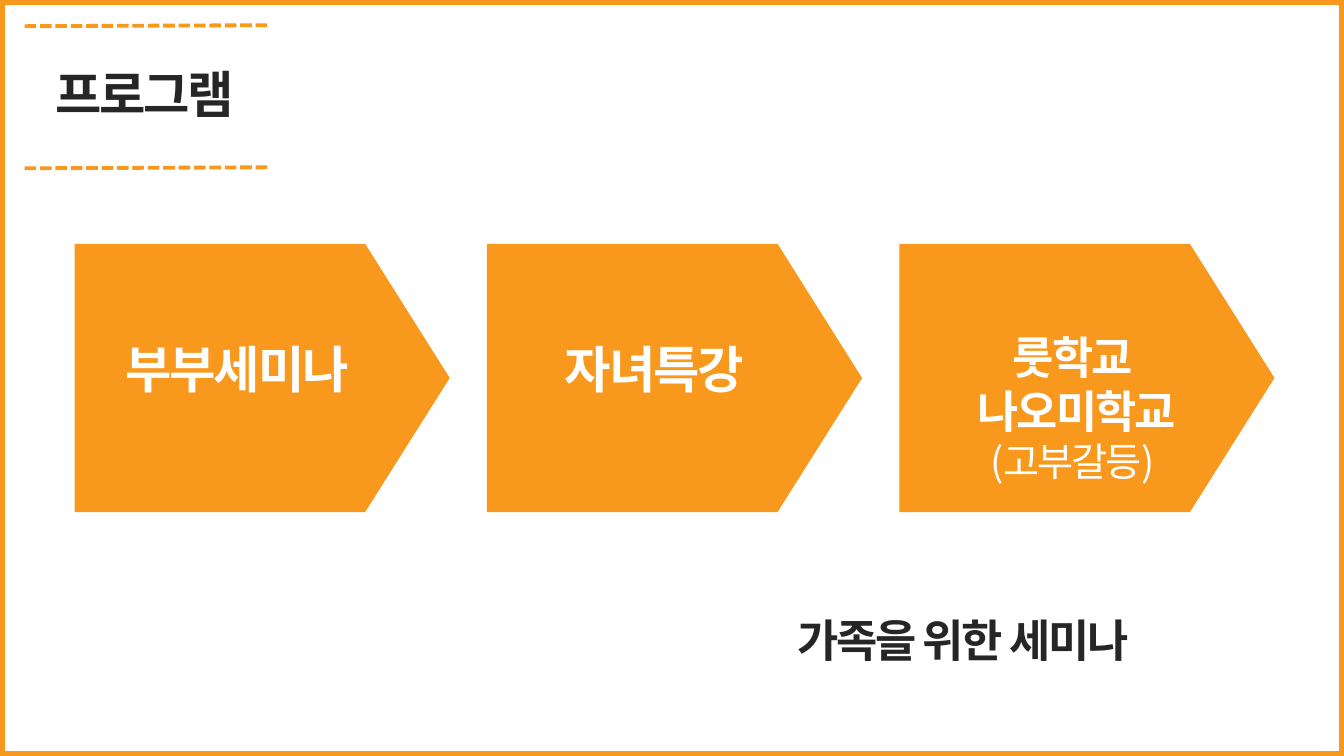
from pptx import Presentation
from pptx.dml.color import RGBColor
from pptx.enum.dml import MSO_LINE
from pptx.enum.shapes import MSO_CONNECTOR, MSO_SHAPE
from pptx.enum.text import MSO_ANCHOR, MSO_AUTO_SIZE, PP_ALIGN
from pptx.oxml.ns import qn
from pptx.util import Inches, Pt
from lxml.etree import SubElement

ORANGE = RGBColor(0xF8, 0x98, 0x1D)
DARK = RGBColor(0x26, 0x26, 0x26)
WHITE = RGBColor(0xFF, 0xFF, 0xFF)
FONT = "Noto Sans CJK KR"

# Each line of text: wording, size in points, bold
TITLE = [("프로그램", 36, True)]
CAPTION = [("가족을 위한 세미나", 32, True)]
# Each program: left, top and height of its label, then its lines
PROGRAMS = [
    (0.96, 3.3, 0.71, [("부부세미나", 36, True)]),
    (5.1, 3.31, 0.71, [("자녀특강", 36, True)]),
    (9.25, 3.22, 1.65, [("룻학교", 32, True), (" 나오미학교", 32, True), ("(고부갈등)", 28, False)]),
]
ARROW_LEFT, ARROW_STEP = 0.74, 4.09
RULE_TOPS = (0.25, 1.66)


def write_lines(box, lines, color):
    frame = box.text_frame
    frame.word_wrap = True
    frame.auto_size = MSO_AUTO_SIZE.SHAPE_TO_FIT_TEXT
    frame.vertical_anchor = MSO_ANCHOR.TOP
    frame.text = "\n".join(text for text, _, _ in lines)
    for para, (_, size, bold) in zip(frame.paragraphs, lines):
        para.alignment = PP_ALIGN.CENTER
        para.line_spacing = 1.0
        para.space_before = Pt(0)
        for span in para.runs:
            span.font.size = Pt(size)
            span.font.bold = bold
            span.font.name = FONT
            span.font.color.rgb = color
            properties = span.font._element
            properties.set("spc", "-150")
            SubElement(properties, qn("a:ea")).set("typeface", FONT)


def add_label(page, left, top, width, height, lines, color):
    box = page.shapes.add_textbox(Inches(left), Inches(top), Inches(width), Inches(height))
    write_lines(box, lines, color)


def add_frame(page):
    frame = page.shapes.add_shape(
        MSO_SHAPE.RECTANGLE, Inches(0.02), Inches(0.02), Inches(13.29), Inches(7.46))
    frame.shadow.inherit = False
    frame.fill.background()
    frame.line.color.rgb = ORANGE
    frame.line.width = Pt(3.75)


def add_dashed_rule(page, top):
    rule = page.shapes.add_connector(
        MSO_CONNECTOR.STRAIGHT, Inches(2.65), Inches(top), Inches(0.23), Inches(top + 0.01))
    rule.line.color.rgb = ORANGE
    rule.line.width = Pt(2.75)
    rule.line.dash_style = MSO_LINE.SQUARE_DOT
    SubElement(rule._element.spPr, qn("a:effectLst"))


def add_arrow(page, left):
    arrow = page.shapes.add_shape(
        MSO_SHAPE.PENTAGON, Inches(left), Inches(2.42), Inches(3.72), Inches(2.66))
    arrow.adjustments[0] = 0.315
    arrow.shadow.inherit = False
    arrow.fill.solid()
    arrow.fill.fore_color.rgb = ORANGE
    arrow.line.fill.background()


def main():
    deck = Presentation()
    deck.slide_width, deck.slide_height = Inches(13.33), Inches(7.5)
    page = deck.slides.add_slide(deck.slide_layouts[5])

    title = page.shapes.title
    title.left, title.top = Inches(0.15), Inches(0.58)
    title.width, title.height = Inches(2.57), Inches(0.71)
    write_lines(title, TITLE, DARK)

    add_frame(page)
    for top in RULE_TOPS:
        add_dashed_rule(page, top)
    for index, (left, top, height, lines) in enumerate(PROGRAMS):
        add_arrow(page, ARROW_LEFT + index * ARROW_STEP)
        add_label(page, left, top, 2.78, height, lines, WHITE)
    add_label(page, 6.02, 6.03, 7.06, 0.64, CAPTION, DARK)

    deck.save("out.pptx")


if __name__ == "__main__":
    main()
